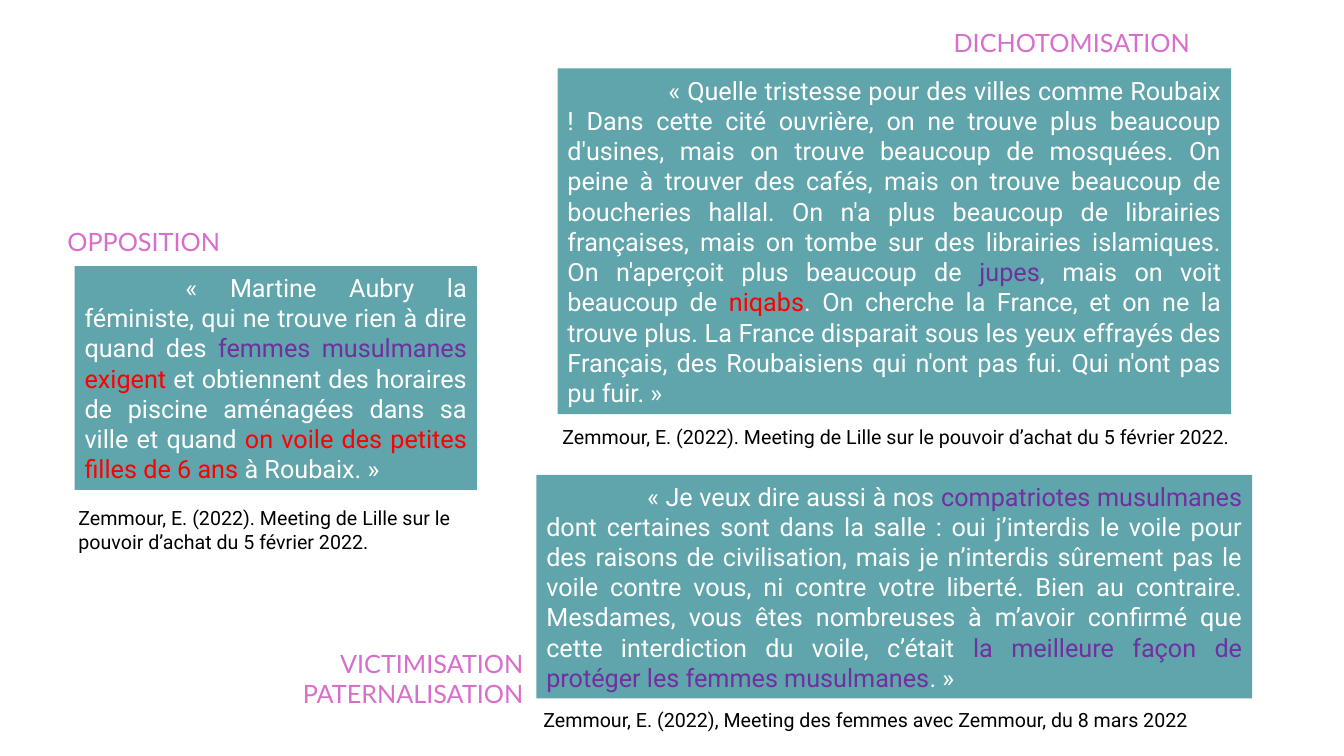
"""Build a slide of three annotated speech quotations with their sources."""
from dataclasses import dataclass

from pptx import Presentation
from pptx.dml.color import RGBColor
from pptx.enum.shapes import MSO_SHAPE
from pptx.enum.text import MSO_ANCHOR, PP_ALIGN
from pptx.util import Inches, Pt


@dataclass(frozen=True)
class Theme:
    panel: str = "60A5AC"
    plain: str = "FFFFFF"
    women: str = "7030A0"
    threat: str = "FF0000"
    label: str = "D86ECC"
    source: str = "000000"
    quote_font: str = "Roboto"
    label_font: str = "Lato"
    large: int = 18
    small: int = 14


class QuotePage:
    """Draw quotations, sources and labels on one slide."""

    def __init__(self, page, theme):
        self.page = page
        self.theme = theme

    def style(self, paragraph, font, size, color=None):
        paragraph.font.name = font
        paragraph.font.size = Pt(size)
        if color:
            paragraph.font.color.rgb = RGBColor.from_string(color)

    def quote(self, left, top, width, height, spans):
        box = self.page.shapes.add_shape(
            MSO_SHAPE.RECTANGLE, Inches(left), Inches(top), Inches(width), Inches(height))
        box.shadow.inherit = False
        box.fill.solid()
        box.fill.fore_color.rgb = RGBColor.from_string(self.theme.panel)
        box.line.fill.background()
        box.text_frame.word_wrap = True
        box.text_frame.vertical_anchor = MSO_ANCHOR.MIDDLE
        paragraph = box.text_frame.paragraphs[0]
        paragraph.alignment = PP_ALIGN.JUSTIFY
        paragraph._p.get_or_add_pPr().set("indent", str(Inches(1)))
        self.style(paragraph, self.theme.quote_font, self.theme.large)
        for text, color in spans:
            span = paragraph.add_run()
            span.text = text
            span.font.color.rgb = RGBColor.from_string(color)

    def text(self, left, top, width, height, lines, font, size, color, alignment):
        box = self.page.shapes.add_textbox(
            Inches(left), Inches(top), Inches(width), Inches(height))
        box.text_frame.word_wrap = True
        box.text_frame.text = lines
        for paragraph in box.text_frame.paragraphs:
            paragraph.alignment = alignment
            self.style(paragraph, font, size, color)

    def source(self, left, top, width, height, line):
        self.text(left, top, width, height, line, self.theme.quote_font,
                  self.theme.small, self.theme.source, PP_ALIGN.LEFT)

    def label(self, left, top, width, height, lines, alignment=PP_ALIGN.LEFT):
        self.text(left, top, width, height, lines, self.theme.label_font,
                  self.theme.large, self.theme.label, alignment)


def main():
    theme = Theme()
    deck = Presentation()
    deck.slide_width, deck.slide_height = Inches(13.33), Inches(7.5)
    page = QuotePage(deck.slides.add_slide(deck.slide_layouts[6]), theme)
    lille = "Zemmour, E. (2022). Meeting de Lille sur le pouvoir d’achat du 5 février 2022."

    page.label(0.57, 2.2, 3, 0.4, "OPPOSITION")
    page.quote(0.74, 2.64, 3.99, 2.22, [
        ("« Martine Aubry la féministe, qui ne trouve rien à dire quand des ", theme.plain),
        ("femmes musulmanes ", theme.women),
        ("exigent", theme.threat),
        (" et obtiennent des horaires de piscine aménagées dans sa ville et quand ",
         theme.plain),
        ("on voile des petites filles de 6 ans ", theme.threat),
        ("à Roubaix. »", theme.plain),
    ])
    page.source(0.68, 4.97, 4.1, 0.57, lille)

    page.label(9.36, 0.22, 3, 0.4, "DICHOTOMISATION")
    page.quote(5.53, 0.68, 6.68, 3.43, [
        ("« Quelle tristesse pour des villes comme Roubaix ! Dans cette cité ouvrière, "
         "on ne trouve plus beaucoup d'usines, mais on trouve beaucoup de mosquées. "
         "On peine à trouver des cafés, mais on trouve beaucoup de boucheries hallal. "
         "On n'a plus beaucoup de librairies françaises, mais on tombe sur des "
         "librairies islamiques. On n'aperçoit plus beaucoup de ", theme.plain),
        ("jupes", theme.women),
        (", mais on voit beaucoup de ", theme.plain),
        ("niqabs", theme.threat),
        (". On cherche la France, et on ne la trouve plus. La France disparait sous "
         "les yeux effrayés des Français, des Roubaisiens qui n'ont pas fui. "
         "Qui n'ont pas pu fuir. »", theme.plain),
    ])
    page.source(5.48, 4.17, 7.1, 0.34, lille)

    page.label(1.29, 6.38, 4, 0.71, "VICTIMISATION\nPATERNALISATION", PP_ALIGN.RIGHT)
    page.quote(5.32, 4.71, 7.1, 2.22, [
        ("« Je veux dire aussi à nos ", theme.plain),
        ("compatriotes musulmanes", theme.women),
        (" dont certaines sont dans la salle : oui j’interdis le voile pour des raisons "
         "de civilisation, mais je n’interdis sûrement pas le voile contre vous, ni "
         "contre votre liberté. Bien au contraire. Mesdames, vous êtes nombreuses à "
         "m’avoir confirmé que cette interdiction du voile, c’était ", theme.plain),
        ("la meilleure façon de protéger les femmes musulmanes", theme.women),
        (". »", theme.plain),
    ])
    page.source(5.29, 6.97, 7.72, 0.34,
                "Zemmour, E. (2022), Meeting des femmes avec Zemmour, du 8 mars 2022")
    deck.save("out.pptx")


if __name__ == "__main__":
    main()
